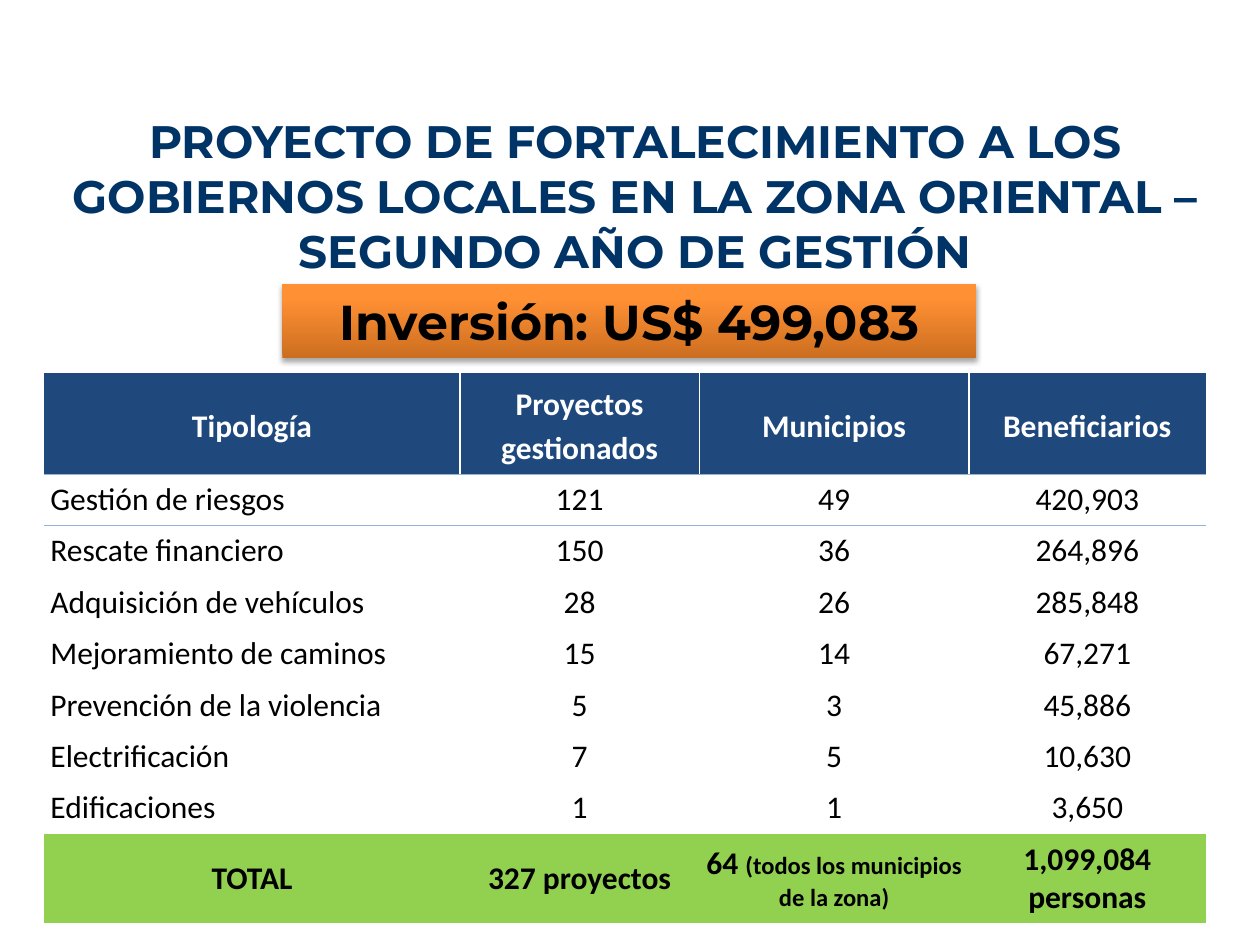
from dataclasses import dataclass

from lxml import etree
from pptx import Presentation
from pptx.dml.color import RGBColor
from pptx.enum.shapes import MSO_SHAPE
from pptx.enum.text import MSO_ANCHOR, MSO_AUTO_SIZE, PP_ALIGN
from pptx.oxml.ns import qn
from pptx.util import Inches, Pt

RECT = MSO_SHAPE.RECTANGLE
MIDDLE = MSO_ANCHOR.MIDDLE
LEFT, CENTER = PP_ALIGN.LEFT, PP_ALIGN.CENTER
FIXED = MSO_AUTO_SIZE.NONE
PLAIN_GRID = "{2D5ABB26-0587-4C30-8999-92F81FD0307C}"


@dataclass(frozen=True)
class Theme:
    head_font: str = "Montserrat"
    body_font: str = "Calibri"
    title: str = "003366"
    ink: str = "000000"
    paper: str = "FFFFFF"
    header: str = "1F497D"
    rule: str = "95B3D7"
    total: str = "92D050"
    glow: tuple = ((0, "CC6E20"), (80, "FF9034"), (100, "FF9136"))
    title_size: int = 26
    sum_size: int = 28
    body_size: int = 18
    note_size: int = 14


THEME = Theme()

HEADS = ("Tipología", "Proyectos gestionados", "Municipios", "Beneficiarios")
ROWS = (
    ("Gestión de riesgos", "121", "49", "420,903"),
    ("Rescate financiero", "150", "36", "264,896"),
    ("Adquisición de vehículos", "28", "26", "285,848"),
    ("Mejoramiento de caminos", "15", "14", "67,271"),
    ("Prevención de la violencia", "5", "3", "45,886"),
    ("Electrificación", "7", "5", "10,630"),
    ("Edificaciones", "1", "1", "3,650"),
)
TOTALS = ("TOTAL", "327 proyectos", "64 ", "1,099,084 personas")
NOTE = "(todos los municipios de la zona)"


def grid(*units):
    """Lengths on a grid of 100 columns by 75 rows."""
    return [Inches(unit / 10) for unit in units]


def add_run(para, text, size, color, bold=False, font=THEME.body_font):
    run = para.add_run()
    run.text = text
    run.font.name = font
    run.font.size = Pt(size)
    run.font.bold = bold
    run.font.color.rgb = RGBColor.from_string(color)


def add_node(parent, tag, **attrs):
    values = {key: str(value) for key, value in attrs.items()}
    return etree.SubElement(parent, qn(tag), values)


def set_title(slide, text):
    title = slide.shapes.title
    title.left, title.top, title.width, title.height = grid(2, 8.4, 96.9, 14.2)
    frame = title.text_frame
    frame.word_wrap = True
    frame.auto_size = FIXED
    frame.vertical_anchor = MIDDLE
    para = frame.paragraphs[0]
    para.alignment = CENTER
    add_run(para, text, THEME.title_size, THEME.title, True, THEME.head_font)


def add_banner(slide, text):
    box = slide.shapes.add_shape(RECT, *grid(22.4, 22.5, 55.1, 5.9))
    box.line.fill.background()
    # Three-stop gradient, dark at the foot
    box.fill.gradient()
    box.fill.gradient_angle = 90
    props = box.element.spPr
    stops = props.find(".//" + qn("a:gsLst"))
    stops.clear()
    for share, color in THEME.glow:
        stop = add_node(stops, "a:gs", pos=share * 1000)
        add_node(stop, "a:srgbClr", val=color)
    # Soft shadow straight below
    box.shadow.inherit = False
    shade = add_node(props.find(qn("a:effectLst")), "a:outerShdw",
                     blurRad=Pt(3.1), dist=Pt(1.8), dir=90 * 60000,
                     rotWithShape=0)
    tint = add_node(shade, "a:srgbClr", val=THEME.ink)
    add_node(tint, "a:alpha", val=35000)
    frame = box.text_frame
    frame.word_wrap = True
    frame.vertical_anchor = MIDDLE
    para = frame.paragraphs[0]
    para.alignment = CENTER
    add_run(para, text, THEME.sum_size, THEME.ink, True, THEME.head_font)


def set_edge(cell, side, color, width):
    line = add_node(cell._tc.get_or_add_tcPr(), "a:ln" + side, w=Pt(width))
    add_node(add_node(line, "a:solidFill"), "a:srgbClr", val=color)


def fill_cell(cell, text, fill, color=THEME.ink, bold=False, align=CENTER):
    cell.fill.solid()
    cell.fill.fore_color.rgb = RGBColor.from_string(fill)
    cell.vertical_anchor = MIDDLE
    cell.margin_left = cell.margin_right = Inches(0.05)
    cell.margin_top = cell.margin_bottom = Inches(0.05)
    para = cell.text_frame.paragraphs[0]
    para.alignment = align
    add_run(para, text, THEME.body_size, color, bold)
    return para


def add_grid(slide):
    widths = grid(33, 19, 21.4, 18.8)
    heights = grid(8, *[4.08] * len(ROWS), 7.1)
    left, top = grid(3.5, 29.6)
    table = slide.shapes.add_table(len(heights), len(widths), left, top,
                                   sum(widths), sum(heights)).table
    table.first_row = table.horz_banding = False
    table._tbl.tblPr.find(qn("a:tableStyleId")).text = PLAIN_GRID
    for col, width in zip(table.columns, widths):
        col.width = width
    for row, height in zip(table.rows, heights):
        row.height = height

    # Header row
    for col, text in enumerate(HEADS):
        cell = table.cell(0, col)
        if col:
            set_edge(cell, "L", THEME.paper, 1)
        if col < len(HEADS) - 1:
            set_edge(cell, "R", THEME.paper, 1)
        set_edge(cell, "B", THEME.rule, 0.5)
        para = fill_cell(cell, text, THEME.header, THEME.paper, True)
        para.line_spacing = 1.15

    # Project rows
    for row, texts in enumerate(ROWS, 1):
        for col, text in enumerate(texts):
            cell = table.cell(row, col)
            if row == 1:
                set_edge(cell, "T", THEME.rule, 0.5)
            fill_cell(cell, text, THEME.paper, align=CENTER if col else LEFT)

    # Total row, with a small note on the towns
    last = len(heights) - 1
    paras = [fill_cell(table.cell(last, col), text, THEME.total, bold=True)
             for col, text in enumerate(TOTALS)]
    add_run(paras[2], NOTE, THEME.note_size, THEME.ink, True)


def main():
    deck = Presentation()
    deck.slide_width, deck.slide_height = grid(100, 75)
    slide = deck.slides.add_slide(deck.slide_layouts[5])
    set_title(slide, "PROYECTO DE FORTALECIMIENTO A LOS GOBIERNOS LOCALES "
                     "EN LA ZONA ORIENTAL – SEGUNDO AÑO DE GESTIÓN")
    add_grid(slide)
    add_banner(slide, "Inversión: US$ 499,083")
    deck.save("out.pptx")


if __name__ == "__main__":
    main()
